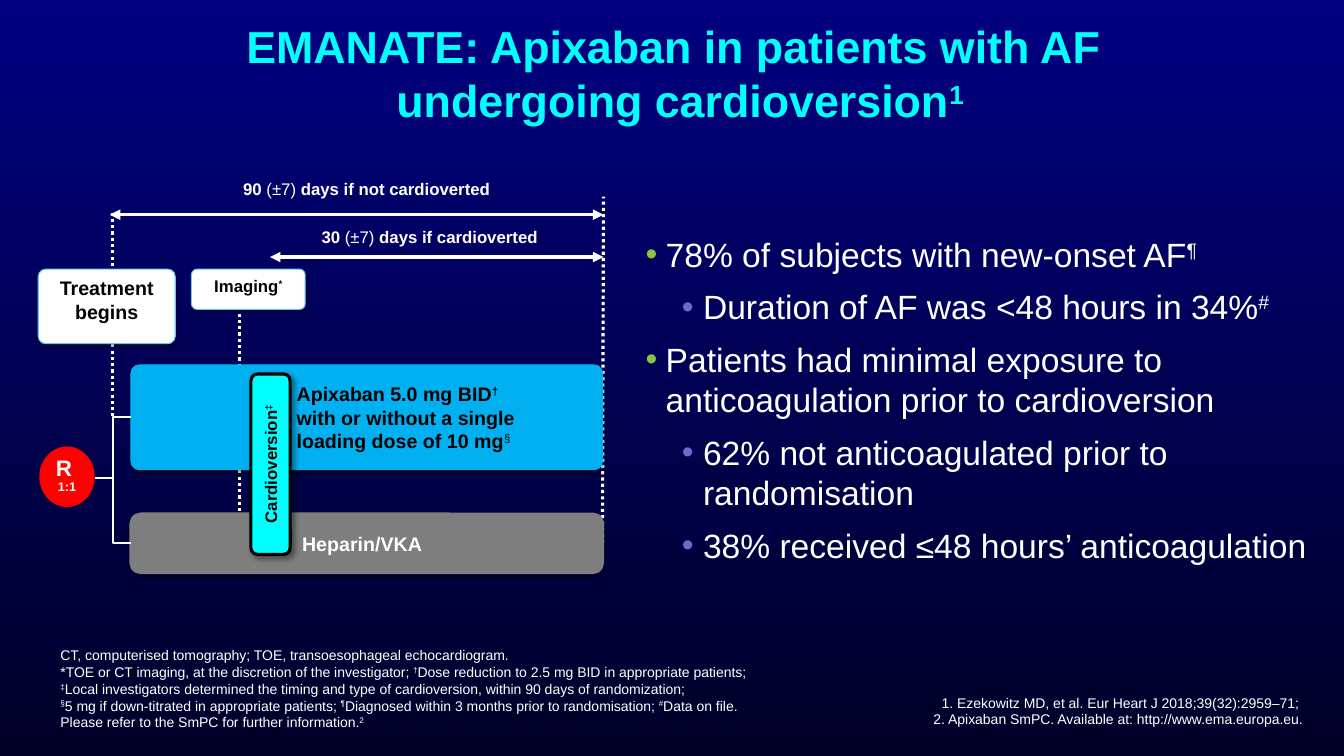
import dataclasses

import pptx
import pptx.dml.color
import pptx.enum.dml
import pptx.enum.shapes
import pptx.enum.text
import pptx.oxml
import pptx.oxml.ns
import pptx.util
from lxml import etree

ALIGN = pptx.enum.text.PP_ALIGN
ANCHOR = pptx.enum.text.MSO_ANCHOR
SHAPE = pptx.enum.shapes.MSO_SHAPE
CONNECTOR = pptx.enum.shapes.MSO_CONNECTOR
LEFT, RIGHT = 1, 3  # connection sites of a rectangle


@dataclasses.dataclass(frozen=True)
class Theme:
    font: str = "Arial"
    white: str = "FFFFFF"
    black: str = "000000"
    cyan: str = "00FFFF"
    blue: str = "00B0F0"
    grey: str = "7E7E7E"
    red: str = "FF0000"
    box_edge: str = "60C9FD"
    background: tuple = ("000080", "000028")
    bullets: tuple = ("8CC63F", "6B6BCE")
    title: int = 32
    body: int = 24
    randomise: int = 16
    arm: int = 14
    label: int = 12
    note: int = 10
    ratio: int = 9
    # opacity in percent, blur and distance in points, angle in degrees
    box_shadow: tuple = (35, 3.1, 1.8, 90)
    bar_shadow: tuple = (32, 3.5, 2.2, 90)
    event_shadow: tuple = (40, 4, 3, 45)


def color(code):
    return pptx.dml.color.RGBColor.from_string(code)


def child(parent, tag, **attributes):
    element = etree.SubElement(parent, pptx.oxml.ns.qn(tag))
    for name, value in attributes.items():
        element.set(name, str(value))
    return element


class SlideBuilder:
    """Places elements on a grid whose cells are a tenth of an inch square."""

    CELL = pptx.util.Inches(0.1)

    def __init__(self, presentation, theme):
        self.theme = theme
        self.slide = presentation.slides.add_slide(presentation.slide_layouts[6])
        self.shapes = self.slide.shapes
        fill = self.slide.background.fill
        fill.gradient()
        fill.gradient_angle = 270
        for stop, code in zip(fill.gradient_stops, theme.background):
            stop.color.rgb = color(code)

    def grid(self, *cells):
        return [round(cell * self.CELL) for cell in cells]

    def add_runs(self, paragraph, markup, size, ink, bold):
        """^...^ is superscript, ~...~ is not bold, a newline breaks the line."""
        raised, plain, piece = False, False, ""
        for sign in markup + "\0":
            if sign not in "^~\n\0":
                piece += sign
                continue
            if piece:
                run = paragraph.add_run()
                run.text = piece
                run.font.name, run.font.size = self.theme.font, pptx.util.Pt(size)
                run.font.color.rgb = color(ink)
                run.font.bold = bold and not plain
                if raised:
                    run.font._element.set("baseline", "30000")
                piece = ""
            if sign == "\n":
                paragraph.add_line_break()
            raised ^= sign == "^"
            plain ^= sign == "~"

    def fill_text(self, shape, lines, size, ink, bold=False, align=ALIGN.LEFT,
                  anchor=ANCHOR.TOP, insets=(1, 0.5, 1, 0.5)):
        frame = shape.text_frame
        frame.word_wrap, frame.vertical_anchor = True, anchor
        (frame.margin_left, frame.margin_top,
         frame.margin_right, frame.margin_bottom) = self.grid(*insets)
        for index, line in enumerate(lines):
            paragraph = frame.paragraphs[0] if index == 0 else frame.add_paragraph()
            paragraph.alignment = align
            self.add_runs(paragraph, line, size, ink, bold)
        return frame

    def text(self, place, lines, size, ink=None, **style):
        box = self.shapes.add_textbox(*self.grid(*place))
        return self.fill_text(box, lines, size, ink or self.theme.white, **style)

    def bullets(self, place, items):
        frame = self.text(place, [line for _, line in items], self.theme.body)
        for paragraph, (level, _) in zip(frame.paragraphs, items):
            paragraph.level = level
            paragraph.space_before = pptx.util.Pt(8.8)
            margin, indent = self.grid(*((2, -2), (5.7, -2.1))[level])
            properties = paragraph._p.get_or_add_pPr()
            properties.set("marL", str(margin))
            properties.set("indent", str(indent))
            child(child(properties, "a:buClr"), "a:srgbClr", val=self.theme.bullets[level])
            child(properties, "a:buFont", typeface=self.theme.font)
            child(properties, "a:buChar", char="•")

    def block(self, place, fill, edge=None, width=0.75, kind=SHAPE.ROUNDED_RECTANGLE,
              corner=None, shadow=None):
        shape = self.shapes.add_shape(kind, *self.grid(*place))
        shape.fill.solid()
        shape.fill.fore_color.rgb = color(fill)
        if edge:
            shape.line.color.rgb = color(edge)
            shape.line.width = pptx.util.Pt(width)
        else:
            shape.line.fill.background()
        if corner:
            shape.adjustments[0] = corner
        shape.shadow.inherit = False
        if shadow:
            opacity, blur, distance, angle = shadow
            effects = shape._element.spPr.find(pptx.oxml.ns.qn("a:effectLst"))
            outer = child(effects, "a:outerShdw", blurRad=pptx.util.Pt(blur),
                          dist=pptx.util.Pt(distance), dir=angle * 60000, rotWithShape=0)
            tint = child(outer, "a:srgbClr", val=self.theme.black)
            child(tint, "a:alpha", val=opacity * 1000)
        return shape

    def line(self, start, end, width, kind=CONNECTOR.STRAIGHT, dotted=False, arrows=False):
        line = self.shapes.add_connector(kind, *self.grid(*start, *end))
        line.line.color.rgb = color(self.theme.white)
        line.line.width = pptx.util.Pt(width)
        if dotted:
            line.line.dash_style = pptx.enum.dml.MSO_LINE.ROUND_DOT
        if arrows:
            for tag in ("a:headEnd", "a:tailEnd"):
                child(line.line._ln, tag, type="triangle")
        child(line._element.spPr, "a:effectLst")
        return line

    def send_to_back(self, shape):
        shape._element.getparent().insert(2, shape._element)


def main():
    presentation = pptx.Presentation()
    presentation.slide_width = pptx.util.Inches(13.34)
    presentation.slide_height = pptx.util.Inches(7.5)
    theme = Theme()
    builder = SlideBuilder(presentation, theme)
    start, imaging, finish = 11.2, 23.8, 59.9  # columns of the time marks

    # Title
    builder.text((7.4, 1.4, 120.2, 6.6),
                 ["EMANATE: Apixaban in patients with AF \nundergoing cardioversion^1^"],
                 theme.title, theme.cyan, bold=True, align=ALIGN.CENTER)

    # Key findings
    builder.bullets((63.1, 22.7, 72.3, 34.3), [
        (0, "78% of subjects with new-onset AF^¶^"),
        (1, "Duration of AF was <48 hours in 34%^#^"),
        (0, "Patients had minimal exposure to anticoagulation prior to cardioversion"),
        (1, "62% not anticoagulated prior to randomisation"),
        (1, "38% received ≤48 hours’ anticoagulation")])

    # Treatment arms
    builder.line((imaging, 28), (imaging, 52.6), 2.25, dotted=True)
    heparin = builder.block((13, 51, 46.8, 5.8), theme.grey, theme.grey, 2.25,
                            shadow=theme.bar_shadow)
    builder.fill_text(heparin, ["Heparin/VKA"], theme.arm, theme.white, bold=True,
                      anchor=ANCHOR.MIDDLE, insets=(16.7, 0.5, 1, 0.5))
    apixaban = builder.block((13, 36.2, 46.8, 10.4), theme.blue, theme.blue,
                             corner=0.08, shadow=theme.box_shadow)
    builder.fill_text(apixaban, ["Apixaban 5.0 mg BID^†^\nwith or without a single loading "
                                 "dose of 10 mg~^§^~"], theme.arm, theme.black, bold=True,
                      anchor=ANCHOR.MIDDLE, insets=(16.2, 0.5, 1, 0.5))
    end_mark = builder.line((finish, 53.9), (finish, 19.5), 2.25, dotted=True)
    end_mark.begin_connect(heparin, RIGHT)
    builder.send_to_back(end_mark)

    # Cardioversion event
    event = builder.block((17.9, 44.1, 17.9, 3.9), theme.cyan, theme.black, 2.25,
                          corner=0.17, shadow=theme.event_shadow)
    event.rotation = 270
    builder.fill_text(event, ["Cardioversion^‡^"], theme.label, theme.black, bold=True,
                      align=ALIGN.CENTER, anchor=ANCHOR.MIDDLE)

    # Follow-up periods
    for left, row, label, place in (
            (26.8, 25.5, "30 ~(±7)~ days if cardioverted", (28.9, 22, 27.5, 3.7)),
            (10.9, 21.3, "90 ~(±7)~ days if not cardioverted", (20.9, 17.2, 31, 3.7))):
        builder.line((left, row), (finish, row), 2.5, arrows=True)
        builder.text(place, [label], theme.label, bold=True, align=ALIGN.CENTER)

    # Randomisation
    for arm in (apixaban, heparin):
        branch = builder.line((9.4, 47.4), (13, 50), 1.5, CONNECTOR.ELBOW)
        branch.end_connect(arm, LEFT)
    builder.block((3.9, 44.3, 5.5, 6), theme.red, kind=SHAPE.OVAL)
    ratio = builder.text((3.9, 45, 5.9, 5.6), ["R ", "1:1"], theme.randomise, bold=True,
                         align=ALIGN.CENTER, insets=(0, 0.5, 0.4, 0.5))
    ratio.paragraphs[1].runs[0].font.size = pptx.util.Pt(theme.ratio)
    for paragraph in ratio.paragraphs:
        paragraph.line_spacing = 0.85

    # Time marks
    builder.line((start, 21.1), (start, 41.4), 2.25, dotted=True)
    for place, label, size, corner in (
            ((19, 26.7, 11.3, 4), "Imaging^*^", theme.label, 0.14),
            ((3.8, 26.7, 13.6, 7.4), "Treatment begins", theme.arm, 0.1)):
        box = builder.block(place, theme.white, theme.box_edge, corner=corner,
                            shadow=theme.box_shadow)
        builder.fill_text(box, [label], size, theme.black, bold=True, align=ALIGN.CENTER)

    # Footnotes and references
    builder.text((4.5, 64.1, 78.3, 9.2), [
        "CT, computerised tomography; TOE, transoesophageal echocardiogram.",
        "*TOE or CT imaging, at the discretion of the investigator; "
        "^†^Dose reduction to 2.5 mg BID in appropriate patients;\n"
        "^‡^Local investigators determined the timing and type of cardioversion, "
        "within 90 days of randomization;\n"
        "^§^5 mg if down-titrated in appropriate patients; "
        "^¶^Diagnosed within 3 months prior to randomisation; ^#^Data on file.",
        "Please refer to the SmPC for further information.^2^"],
        theme.note, anchor=ANCHOR.BOTTOM, insets=(1.5, 0, 0, 0.8))
    builder.text((75.3, 68.5, 56.6, 4.9), [
        "1. Ezekowitz MD, et al. Eur Heart J 2018;39(32):2959–71; \n"
        "2. Apixaban SmPC. Available at: http://www.ema.europa.eu."],
        theme.note, align=ALIGN.RIGHT, anchor=ANCHOR.BOTTOM, insets=(0.7, 0.4, 2.6, 1.2))

    presentation.save("out.pptx")


if __name__ == "__main__":
    main()
